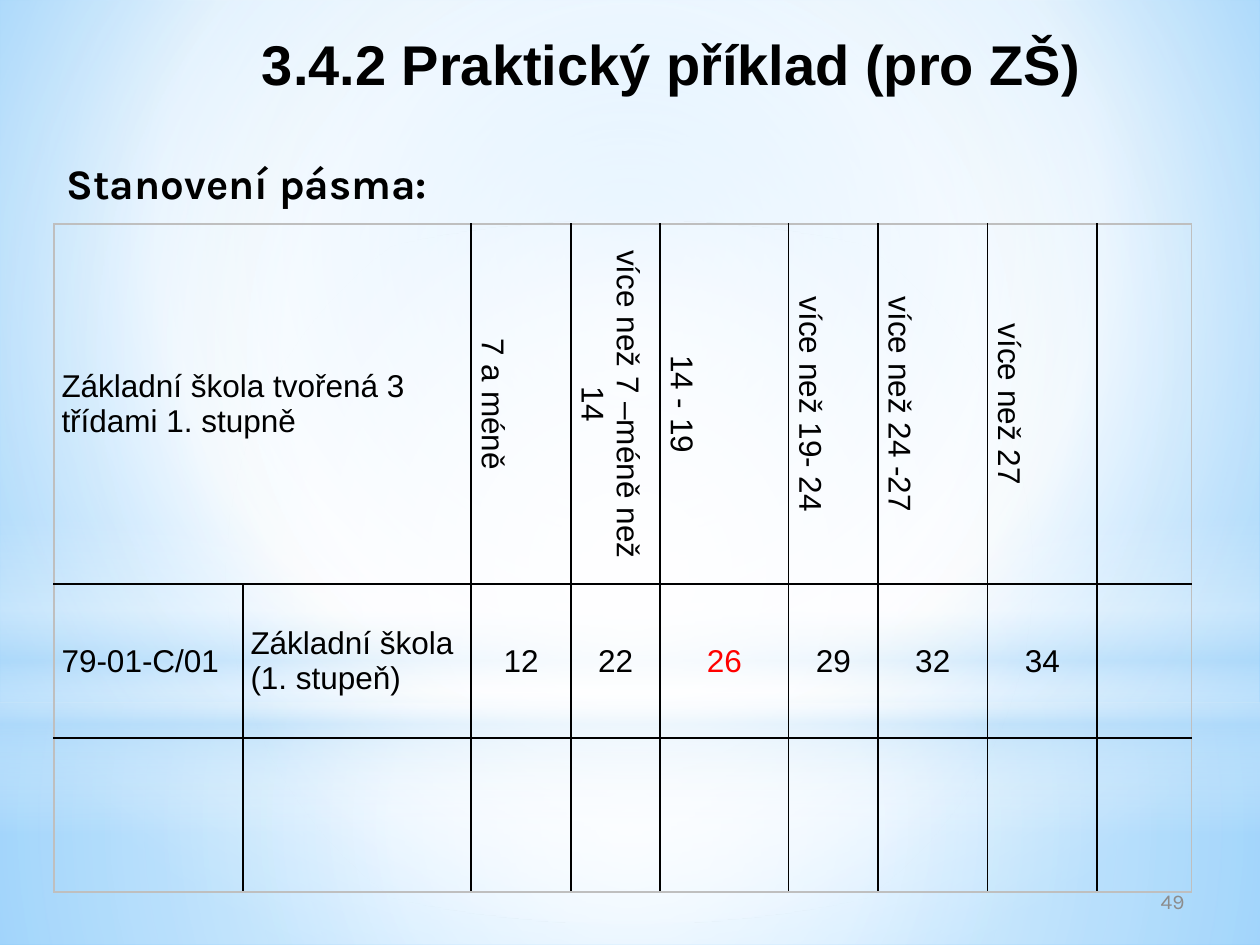
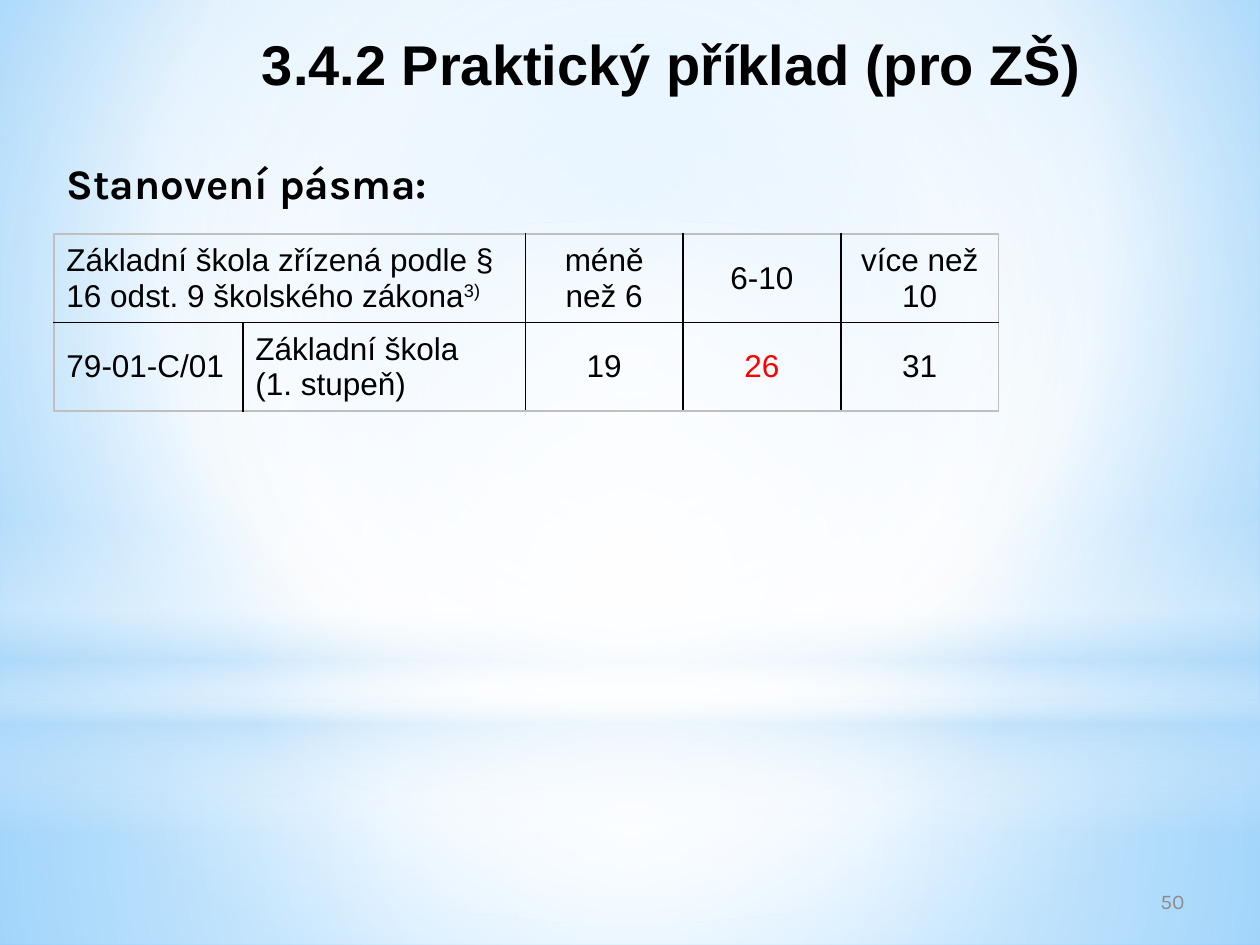
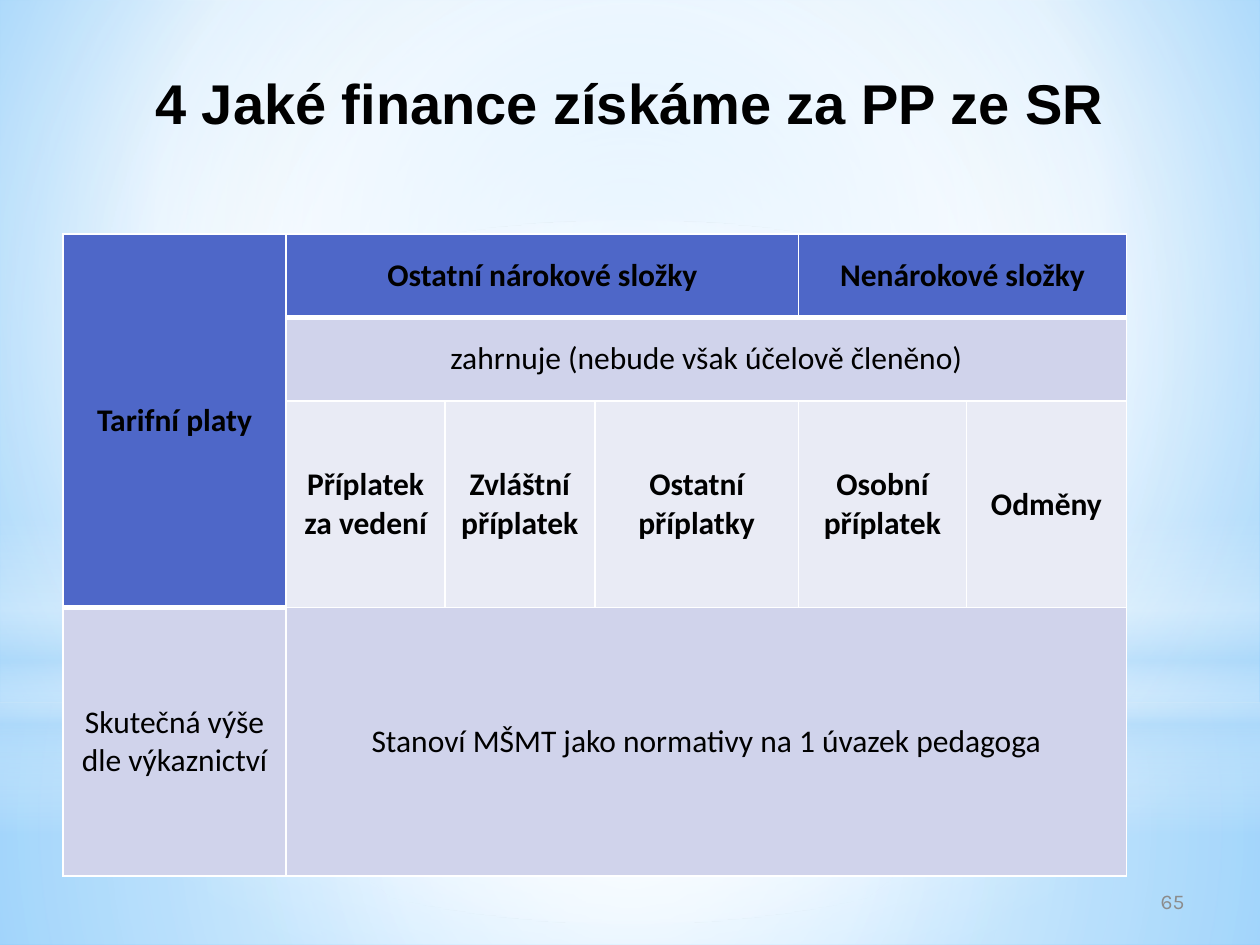
"""Builds three slides on school funding bands and teachers' pay components."""
import pptx
import pptx.dml.color
import pptx.enum.shapes
import pptx.enum.text
import pptx.oxml
import pptx.oxml.ns
import pptx.util
from lxml import etree

Cm, Pt = pptx.util.Cm, pptx.util.Pt
RGB = pptx.dml.color.RGBColor.from_string
qn = pptx.oxml.ns.qn
ALIGN = pptx.enum.text.PP_ALIGN
ANCHOR = pptx.enum.text.MSO_ANCHOR
SHAPE = pptx.enum.shapes.MSO_SHAPE

COLORS = {
    "text": "000000", "number": "8C8C8C", "highlight": "FF0000",
    "grid": "000000", "frame": "BFBFBF", "white": "FFFFFF",
    "header": "4E67C8", "band": "D0D3EB", "light": "E9EBF5",
    "sky": "9ED5FF", "deep_sky": "5BB9FF", "mist": "B4DCFA",
}


def set_gradient(fill, root, stops, to_rect=None):
    """Give a fill colour stops (position, colour, opacity), radial if to_rect is given."""
    fill.gradient()
    grad = root.find(".//" + qn("a:gradFill"))
    for child in list(grad):
        grad.remove(child)
    gs_lst = etree.SubElement(grad, qn("a:gsLst"))
    for pos, color, alpha in stops:
        gs = etree.SubElement(gs_lst, qn("a:gs"), pos=str(pos * 1000))
        clr = etree.SubElement(gs, qn("a:srgbClr"), val=COLORS[color])
        if alpha < 100:
            etree.SubElement(clr, qn("a:alpha"), val=str(alpha * 1000))
    if to_rect:
        path = etree.SubElement(grad, qn("a:path"), path="circle")
        sides = {side: str(v * 1000) for side, v in zip("ltrb", to_rect)}
        etree.SubElement(path, qn("a:fillToRect"), **sides)
    else:
        etree.SubElement(grad, qn("a:lin"), ang="5400000", scaled="0")


def make_table(s, left, top, widths, heights, texts, spans, font, inner, outer,
               left_cols=0, margins=(0.25, 0.13), heavy_tops=()):
    """Add a table with ruled borders; None marks cells without text."""
    n_rows, n_cols = len(heights), len(widths)
    tbl = s.shapes.add_table(n_rows, n_cols, Cm(left), Cm(top),
                             Cm(sum(widths)), Cm(sum(heights))).table
    tbl.first_row = tbl.horz_banding = False
    for col, width in zip(tbl.columns, widths):
        col.width = Cm(width)
    for row, height in zip(tbl.rows, heights):
        row.height = Cm(height)
    for first, last in spans:
        tbl.cell(*first).merge(tbl.cell(*last))
    for r in range(n_rows):
        for c in range(n_cols):
            cell = tbl.cell(r, c)
            below, right = r + cell.span_height, c + cell.span_width
            tc_pr = cell._tc.get_or_add_tcPr()
            for tag, edge, heavy in (
                    ("a:lnL", c == 0, False),
                    ("a:lnR", right == n_cols, False),
                    ("a:lnT", r == 0, (r, c) in heavy_tops),
                    ("a:lnB", below == n_rows, (below, c) in heavy_tops)):
                ln = etree.SubElement(tc_pr, qn(tag), w=str(Pt(3 if heavy else 1)))
                solid = etree.SubElement(ln, qn("a:solidFill"))
                etree.SubElement(solid, qn("a:srgbClr"),
                                 val=COLORS[outer if edge else inner])
            cell.fill.background()
            cell.vertical_anchor = ANCHOR.MIDDLE
            cell.margin_left = cell.margin_right = Cm(margins[0])
            cell.margin_top = cell.margin_bottom = Cm(margins[1])
            if texts[r][c]:
                cell.text = texts[r][c]
                p = cell.text_frame.paragraphs[0]
                p.alignment = ALIGN.LEFT if c < left_cols else ALIGN.CENTER
                p.font.name, p.font.size = font, Pt(18)
                p.font.color.rgb = RGB(COLORS["text"])
    return tbl


prs = pptx.Presentation()
prs.slide_width, prs.slide_height = Cm(25.4), Cm(19.05)
master = prs.slide_master
set_gradient(master.background.fill, master.element,
             [(0, "sky", 100), (60, "white", 100), (100, "deep_sky", 100)],
             (20, 10, 20, 60))

slides = []
for layout, title, box, number in (
        (1, "3.4.2 Praktický příklad (pro ZŠ)", (2.11, 0.33, 22.86, 2.01), "49"),
        (1, "3.4.2 Praktický příklad (pro ZŠ)", (2.11, 0.33, 22.86, 2.01), "50"),
        (5, "4 Jaké finance získáme za PP ze SR", (1.27, 1.12, 22.86, 2.59), "65")):
    s = prs.slides.add_slide(prs.slide_layouts[layout])
    slides.append(s)
    sp = s.shapes.title
    sp.left, sp.top, sp.width, sp.height = map(Cm, box)
    tf = sp.text_frame
    tf.text = title
    tf.auto_size = pptx.enum.text.MSO_AUTO_SIZE.NONE
    tf.vertical_anchor = ANCHOR.TOP
    tf.margin_top = Cm(0.27)
    p = tf.paragraphs[0]
    p.alignment = ALIGN.CENTER
    p.font.name, p.font.size, p.font.bold = "Arial", Pt(32), True
    p.font.color.rgb = RGB(COLORS["text"])

    tf = s.shapes.add_textbox(Cm(18.21), Cm(17.65), Cm(5.92), Cm(1.02)).text_frame
    tf.word_wrap = True
    tf.vertical_anchor = ANCHOR.MIDDLE
    tf.text = number
    p = tf.paragraphs[0]
    p.alignment = ALIGN.RIGHT
    p.font.name, p.font.size = "Karla", Pt(12)
    p.font.color.rgb = RGB(COLORS["number"])

    if layout == 1:
        sp = s.placeholders[1]
        sp.left, sp.top, sp.width, sp.height = Cm(1.09), Cm(3.05), Cm(23.19), Cm(15.14)
        tf = sp.text_frame
        tf.text = "Stanovení pásma:"
        tf.auto_size = pptx.enum.text.MSO_AUTO_SIZE.NONE
        p = tf.paragraphs[0]
        p.space_before = Pt(0)
        p.font.name, p.font.size, p.font.bold = "Karla", Pt(24), True
        p.font.color.rgb = RGB(COLORS["text"])
        p_pr = p._p.get_or_add_pPr()
        p_pr.set("marL", "0")
        p_pr.set("indent", "0")
        p_pr.insert_element_before(pptx.oxml.parse_xml(
            '<a:buNone xmlns:a="http://schemas.openxmlformats.org/drawingml/2006/main"/>'),
            "a:tabLst", "a:defRPr", "a:extLst")

center = (50, 50, 50, 50)
bands = (
    (SHAPE.RECTANGLE, 14.17, 4.88, center,
     [(0, "white", 91), (37, "white", 76), (100, "mist", 79)]),
    (SHAPE.RECTANGLE, 0, 14.17, center,
     [(0, "white", 89), (48, "white", 62), (100, "mist", 79)]),
    (SHAPE.RECTANGLE, 10.46, 6.35, None,
     [(0, "white", 0), (29, "white", 30), (45, "mist", 40),
      (55, "white", 26), (65, "mist", 60), (100, "white", 0)]),
    (SHAPE.OVAL, 4.45, 14.17, center, [(0, "white", 100), (56, "white", 0)]),
)
for i, (kind, top, height, to_rect, stops) in enumerate(bands):
    sp = slides[0].shapes.add_shape(kind, 0, Cm(top), prs.slide_width, Cm(height))
    sp.shadow.inherit = False
    sp.line.fill.background()
    set_gradient(sp.fill, sp.element, stops, to_rect)
    master.shapes.element.insert(2 + i, sp.element)

tbl = make_table(
    slides[0], 1.09, 4.52, [3.81, 4.6, 2.01, 1.8, 2.59, 1.8, 2.21, 2.21, 1.9],
    [5, 3.1, 3.1],
    [["Základní škola tvořená 3 třídami 1. stupně", None, "7 a méně",
      "více než 7 –méně než 14", "14 - 19", "více než 19- 24", "více než 24 -27",
      "více než 27", None],
     ["79-01-C/01", "Základní škola (1. stupeň)", "12", "22", "26", "29", "32", "34", None],
     [None] * 9],
    [((0, 0), (0, 1))], "Arial", "grid", "frame", left_cols=2, margins=(0.15, 0.08))
for c in range(2, 8):
    tbl.cell(0, c)._tc.get_or_add_tcPr().set("vert", "vert")
tbl.cell(1, 4).text_frame.paragraphs[0].font.color.rgb = RGB(COLORS["highlight"])

tbl = make_table(
    slides[1], 1.09, 4.72, [3.81, 5.69, 3.18, 3.18, 3.18], [1.68, 1.68],
    [["Základní škola zřízená podle § 16 odst. 9 školského zákona", None,
      "méně než 6", "6-10", "více než 10"],
     ["79-01-C/01", "Základní škola\v(1. stupeň)", "19", "26", "31"]],
    [((0, 0), (0, 1))], "Arial", "grid", "frame", left_cols=2)
r = tbl.cell(0, 0).text_frame.paragraphs[0].add_run()
r.text = "3)"
r.font._element.set("baseline", "30000")
tbl.cell(1, 3).text_frame.paragraphs[0].font.color.rgb = RGB(COLORS["highlight"])

tbl = make_table(
    slides[2], 1.27, 4.72, [4.5, 3.2, 3.02, 4.11, 3.38, 3.23], [1.68, 1.68, 4.17, 5.41],
    [["Tarifní platy", "Ostatní nárokové složky", None, None, "Nenárokové složky", None],
     [None, "zahrnuje (nebude však účelově členěno)", None, None, None, None],
     [None, "Příplatek za vedení", "Zvláštní příplatek", "Ostatní příplatky",
      "Osobní příplatek", "Odměny"],
     ["Skutečná výše dle výkaznictví", "Stanoví MŠMT jako normativy na 1 úvazek pedagoga",
      None, None, None, None]],
    [((0, 0), (2, 0)), ((0, 1), (0, 3)), ((0, 4), (0, 5)), ((1, 1), (1, 5)), ((3, 1), (3, 5))],
    "Calibri", "white", "white",
    heavy_tops=[(3, 0)] + [(1, c) for c in range(1, 6)])
for r, (color, bold) in enumerate(
        [("header", True), ("band", False), ("light", True), ("band", False)]):
    for c in range(6):
        in_header = c == 0 and r < 3
        cell = tbl.cell(r, c)
        cell.fill.solid()
        cell.fill.fore_color.rgb = RGB(COLORS["header" if in_header else color])
        cell.text_frame.paragraphs[0].font.bold = in_header or bold

prs.save("out.pptx")
